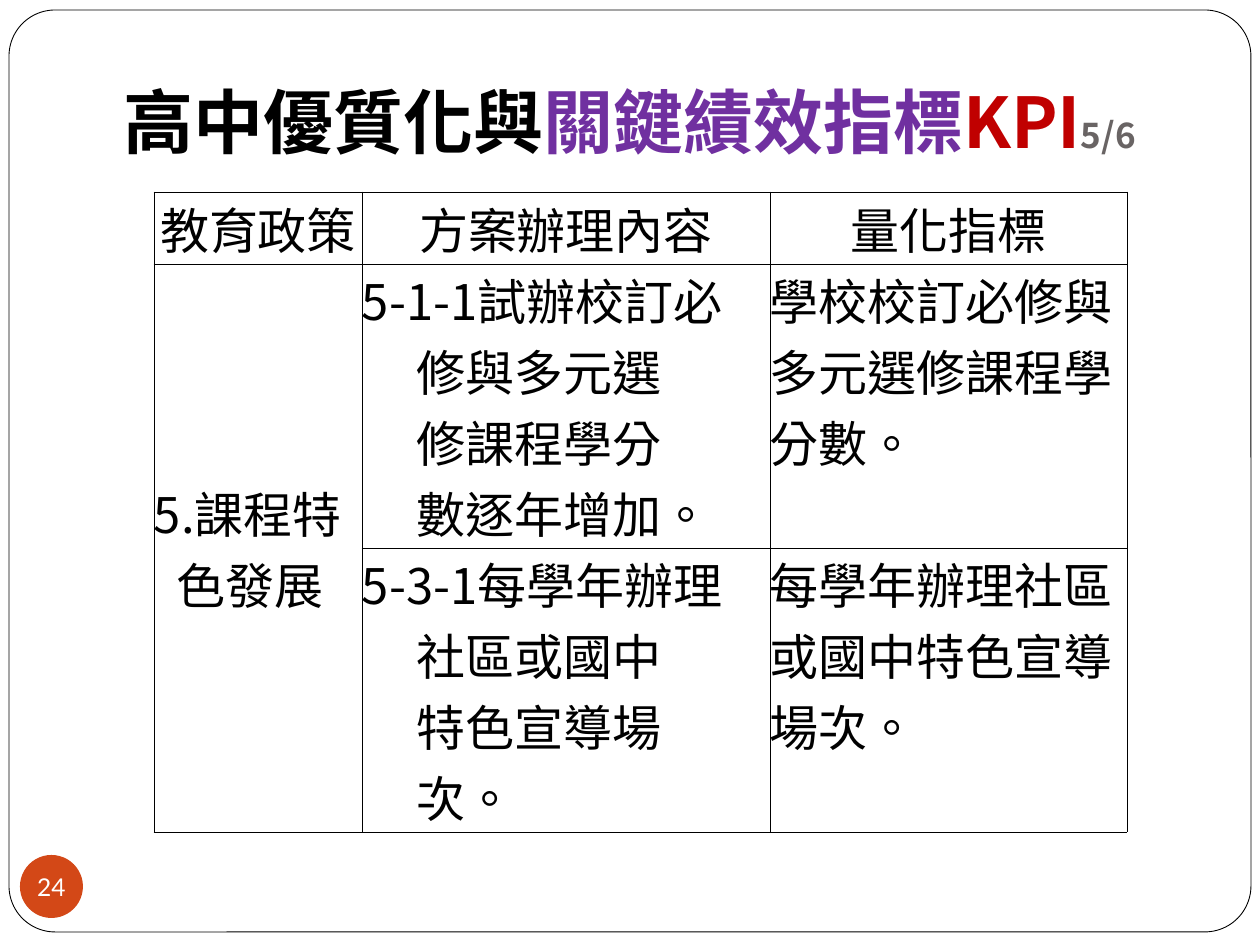
"""Build the slide on course features and their key performance indicators."""
from dataclasses import dataclass
from typing import NamedTuple

from lxml.etree import SubElement as Sub
from pptx import Presentation
from pptx.dml.color import RGBColor as Rgb
from pptx.enum.shapes import MSO_SHAPE as Kind
from pptx.enum.text import MSO_ANCHOR as Anchor, PP_ALIGN as Align
from pptx.oxml.ns import qn
from pptx.util import Pt

SCALE = 914400 / 126


@dataclass(frozen=True)
class Theme:
    ink: str = "000000"
    paper: str = "FFFFFF"
    plum: str = "7030A0"
    red: str = "C00000"
    gray: str = "696464"
    rust: str = "D34817"
    font: str = "Noto Sans CJK SC"
    digit: str = "Lato"
    head: int = 40
    body: int = 28
    small: int = 20
    page: int = 14
    rule: float = 0.5


THEME = Theme()


class Box(NamedTuple):
    left: int
    top: int
    width: int
    height: int


class Run(NamedTuple):
    text: str
    size: int = THEME.body
    color: str = THEME.ink
    bold: bool = False
    font: str = THEME.font


class Cell(NamedTuple):
    row: int
    col: int
    lines: tuple[str, ...]
    indent: int = 0
    align: Align = Align.LEFT
    anchor: Anchor = Anchor.TOP


TITLE = (
    Run("高中優質化與", THEME.head, THEME.ink, True),
    Run("關鍵績效指標", THEME.head, THEME.plum, True),
    Run("KPI", THEME.head, THEME.red, True),
    Run("5/6", THEME.small, THEME.gray, True),
)
HEADS = ("教育政策", "方案辦理內容", "量化指標")
COLS = (208, 408, 357)
ROWS = (72, 284, 284)
CELLS = (
    *(Cell(0, col, (text,), 0, Align.CENTER, Anchor.MIDDLE)
      for col, text in enumerate(HEADS)),
    Cell(1, 0, ("5.課程特", "色發展"), 23, anchor=Anchor.MIDDLE),
    Cell(1, 1, ("5-1-1試辦校訂必", "修與多元選", "修課程學分", "數逐年增加。"), 55),
    Cell(1, 2, ("學校校訂必修與多元選修課程學分數。",)),
    Cell(2, 1, ("5-3-1每學年辦理", "社區或國中", "特色宣導場", "次。"), 55),
    Cell(2, 2, ("每學年辦理社區或國中特色宣導場次。",)),
)


def px(size: int) -> int:
    """Turn px into EMU."""
    return round(size * SCALE)


def place(box: Box) -> tuple[int, ...]:
    """Turn a box into EMU."""
    return tuple(px(size) for size in box)


def write(para, run: Run) -> None:
    """Add one run to a paragraph."""
    item = para.add_run()
    item.text = run.text
    font = item.font
    font.size, font.bold, font.name = Pt(run.size), run.bold, run.font
    font.color.rgb = Rgb.from_string(run.color)
    prop = font._element
    prop.set("lang", "zh-TW")
    Sub(prop, qn("a:ea")).set("typeface", run.font)


def pad(frame, side: int = 0, top: int = 0, base: int = 0) -> None:
    """Set the insets of a text frame or cell."""
    frame.margin_left = frame.margin_right = px(side)
    frame.margin_top, frame.margin_bottom = px(top), px(base)


def shape(slide, kind: Kind, box: Box, fill: str):
    """Draw a flat filled shape."""
    item = slide.shapes.add_shape(kind, *place(box))
    item.shadow.inherit = False
    item.fill.solid()
    item.fill.fore_color.rgb = Rgb.from_string(fill)
    return item


def edge(cell) -> None:
    """Rule all four sides of a cell."""
    prop = cell._tc.get_or_add_tcPr()
    for side in ("lnL", "lnR", "lnT", "lnB"):
        line = Sub(prop, qn(f"a:{side}"), w=str(Pt(THEME.rule)))
        fill = Sub(line, qn("a:solidFill"))
        Sub(fill, qn("a:srgbClr"), val=THEME.ink)
    cell.fill.background()


def enter(cell, data: Cell) -> None:
    """Write the lines of a cell, indenting all but the first."""
    cell.vertical_anchor = data.anchor
    frame = cell.text_frame
    for step, text in enumerate(data.lines):
        para = frame.add_paragraph() if step else frame.paragraphs[0]
        para.alignment = data.align
        if step:
            para._p.get_or_add_pPr().set("marL", str(px(data.indent)))
        write(para, Run(text))


def grid(slide, box: Box) -> None:
    """Draw the table of policy, content and indicators."""
    table = slide.shapes.add_table(len(ROWS), len(COLS), *place(box)).table
    table.first_row = table.horz_banding = False
    for col, width in zip(table.columns, COLS):
        col.width = px(width)
    for row, height in zip(table.rows, ROWS):
        row.height = px(height)
    for cell in table.iter_cells():
        pad(cell)
        edge(cell)
    table.cell(1, 0).merge(table.cell(2, 0))
    for data in CELLS:
        enter(table.cell(data.row, data.col), data)


def title(slide, box: Box) -> None:
    """Write the heading."""
    frame = slide.shapes.add_textbox(*place(box)).text_frame
    frame.word_wrap = True
    frame.vertical_anchor = Anchor.BOTTOM
    pad(frame, 13, 6, 13)
    for run in TITLE:
        write(frame.paragraphs[0], run)


def badge(slide, box: Box) -> None:
    """Draw the page number in its disc."""
    disc = shape(slide, Kind.OVAL, box, THEME.rust)
    disc.line.fill.background()
    frame = disc.text_frame
    frame.word_wrap = False
    frame.vertical_anchor = Anchor.MIDDLE
    pad(frame)
    para = frame.paragraphs[0]
    para.alignment = Align.CENTER
    write(para, Run("24", THEME.page, THEME.paper, font=THEME.digit))


def main() -> None:
    """Build and save the deck."""
    deck = Presentation()
    deck.slide_width, deck.slide_height = px(1260), px(945)
    slide = deck.slides.add_slide(deck.slide_layouts[6])
    panel = shape(slide, Kind.ROUNDED_RECTANGLE, Box(9, 10, 1242, 922), THEME.paper)
    panel.adjustments[0] = 0.05
    panel.line.width = Pt(THEME.rule)
    panel.line.color.rgb = Rgb.from_string(THEME.ink)
    title(slide, Box(111, 37, 1071, 139))
    grid(slide, Box(154, 192, sum(COLS), sum(ROWS)))
    badge(slide, Box(20, 855, 63, 63))
    deck.save("out.pptx")


if __name__ == "__main__":
    main()
